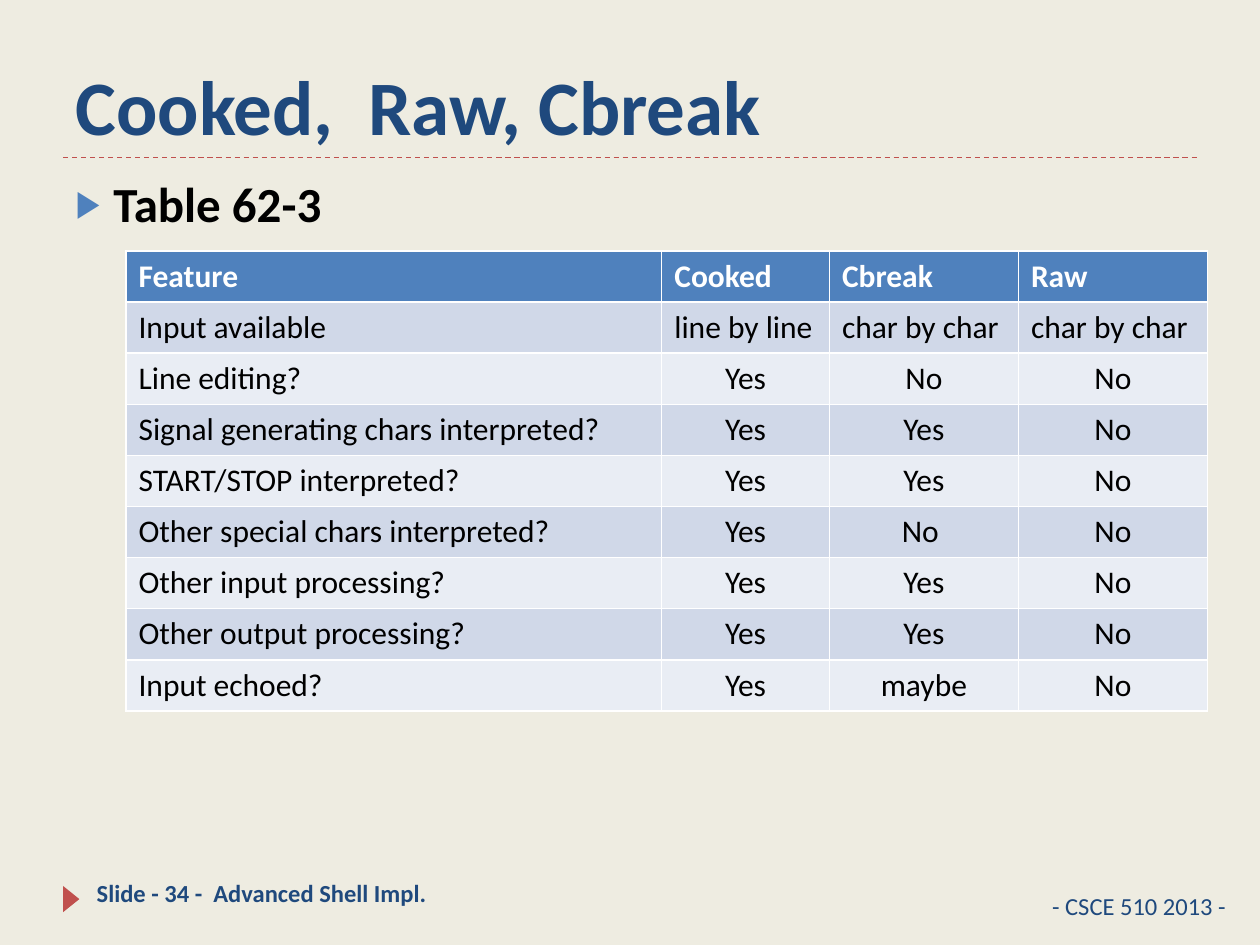
from lxml.etree import SubElement
from pptx import Presentation
from pptx.dml.color import RGBColor
from pptx.enum.dml import MSO_LINE_DASH_STYLE as Dash
from pptx.enum.shapes import MSO_CONNECTOR as Connector, MSO_SHAPE as Shape
from pptx.enum.text import MSO_ANCHOR as Anchor, MSO_AUTO_SIZE as AutoSize, PP_ALIGN as Align
from pptx.oxml.ns import qn
from pptx.util import Cm, Pt

COLORS = {
    "background": "EEECE1",
    "navy": "1F497D",
    "blue": "4F81BD",
    "red": "C0504D",
    "text": "000000",
    "header_text": "FFFFFF",
    "odd_row": "D0D8E8",
    "even_row": "E9EDF4",
}

MODES = [
    ("Feature", "Cooked", "Cbreak", "Raw"),
    ("Input available", "line by line", "char by char", "char by char"),
    ("Line editing?", "Yes", "No", "No"),
    ("Signal generating chars interpreted?", "Yes", "Yes", "No"),
    ("START/STOP interpreted?", "Yes", "Yes", "No"),
    ("Other special chars interpreted?", "Yes", "No ", "No"),
    ("Other input processing?", "Yes", "Yes", "No"),
    ("Other output processing?", "Yes", "Yes", "No"),
    ("Input echoed?", "Yes", "maybe", "No"),
]


class SlideBuilder:
    font_name = "Calibri"

    def __init__(self, slide):
        self.slide = slide
        self.fill(slide.background, "background")

    def color(self, name):
        return RGBColor.from_string(COLORS[name])

    def fill(self, target, name):
        target.fill.solid()
        target.fill.fore_color.rgb = self.color(name)

    def set_text(self, frame, text, size, color, bold=False, align=Align.LEFT):
        frame.text = text
        paragraph = frame.paragraphs[0]
        paragraph.alignment = align
        font = paragraph.font
        font.name, font.size, font.bold = self.font_name, Pt(size), bold
        font.color.rgb = self.color(color)
        return paragraph

    def place(self, placeholder, left, top, width, height):
        placeholder.left, placeholder.top = Cm(left), Cm(top)
        placeholder.width, placeholder.height = Cm(width), Cm(height)
        placeholder.text_frame.auto_size = AutoSize.NONE

    def title(self, text, *box):
        heading = self.slide.shapes.title
        self.place(heading, *box)
        heading.text_frame.vertical_anchor = Anchor.BOTTOM
        self.set_text(heading.text_frame, text, 44, "navy", bold=True)

    def body(self, text, *box):
        content = self.slide.placeholders[1]
        self.place(content, *box)
        item = self.set_text(content.text_frame, text, 28, "text", bold=True)
        item.space_before = Pt(6)
        properties = item._p.get_or_add_pPr()
        properties.set("marL", str(Cm(0.76)))
        properties.set("indent", str(Cm(-0.76)))
        default_run = properties.find(qn("a:defRPr"))
        bullet_color = SubElement(properties, qn("a:buClr"))
        SubElement(bullet_color, qn("a:srgbClr"), val=COLORS["blue"])
        SubElement(properties, qn("a:buSzPct"), val="76000")
        SubElement(properties, qn("a:buChar"), char="▶")
        properties.append(default_run)

    def label(self, text, left, top, width, height, bold=False):
        box = self.slide.shapes.add_textbox(Cm(left), Cm(top), Cm(width), Cm(height))
        box.text_frame.word_wrap = True
        self.set_text(box.text_frame, text, 14, "navy", bold)

    def divider(self, left, right, y):
        rule = self.slide.shapes.add_connector(
            Connector.STRAIGHT, Cm(left), Cm(y), Cm(right), Cm(y))
        rule.line.color.rgb = self.color("red")
        rule.line.width = Pt(0.75)
        rule.line.dash_style = Dash.DASH
        SubElement(rule._element.spPr, qn("a:effectLst"))

    def marker(self, left, top, width, height):
        triangle = self.slide.shapes.add_shape(
            Shape.ISOSCELES_TRIANGLE, Cm(left), Cm(top), Cm(width), Cm(height))
        triangle.rotation = 90
        triangle.shadow.inherit = False
        self.fill(triangle, "red")
        triangle.line.fill.background()

    def table(self, rows, left, top, widths, row_height):
        grid = self.slide.shapes.add_table(
            len(rows), len(widths), Cm(left), Cm(top),
            Cm(sum(widths)), Cm(row_height * len(rows))).table
        for column, width in zip(grid.columns, widths):
            column.width = Cm(width)
        for r, row in enumerate(rows):
            grid.rows[r].height = Cm(row_height)
            header = r == 0
            band = "blue" if header else "odd_row" if r % 2 else "even_row"
            for c, text in enumerate(row):
                cell = grid.cell(r, c)
                self.fill(cell, band)
                align = Align.CENTER if r > 1 and c > 0 else Align.LEFT
                self.set_text(cell.text_frame, text, 18,
                              "header_text" if header else "text", header, align)


def main():
    deck = Presentation()
    deck.slide_width, deck.slide_height = Cm(25.4), Cm(19.05)
    page = SlideBuilder(deck.slides.add_slide(deck.slide_layouts[1]))
    page.divider(1.27, 24.13, 3.17)
    page.marker(1.17, 17.96, 0.53, 0.33)
    page.title("Cooked,  Raw, Cbreak", 1.27, 0.43, 22.86, 2.74)
    page.label("- CSCE 510 2013 -", 20.96, 17.83, 4.24, 1.02)
    page.label("Slide - 34 -  Advanced Shell Impl.", 1.7, 17.58, 7.42, 1.02, bold=True)
    page.body("Table 62-3", 1.27, 3.38, 22.86, 13.72)
    page.table(MODES, 2.54, 5.06, [10.8, 3.38, 3.81, 3.81], 1.03)
    deck.save("out.pptx")


if __name__ == "__main__":
    main()
